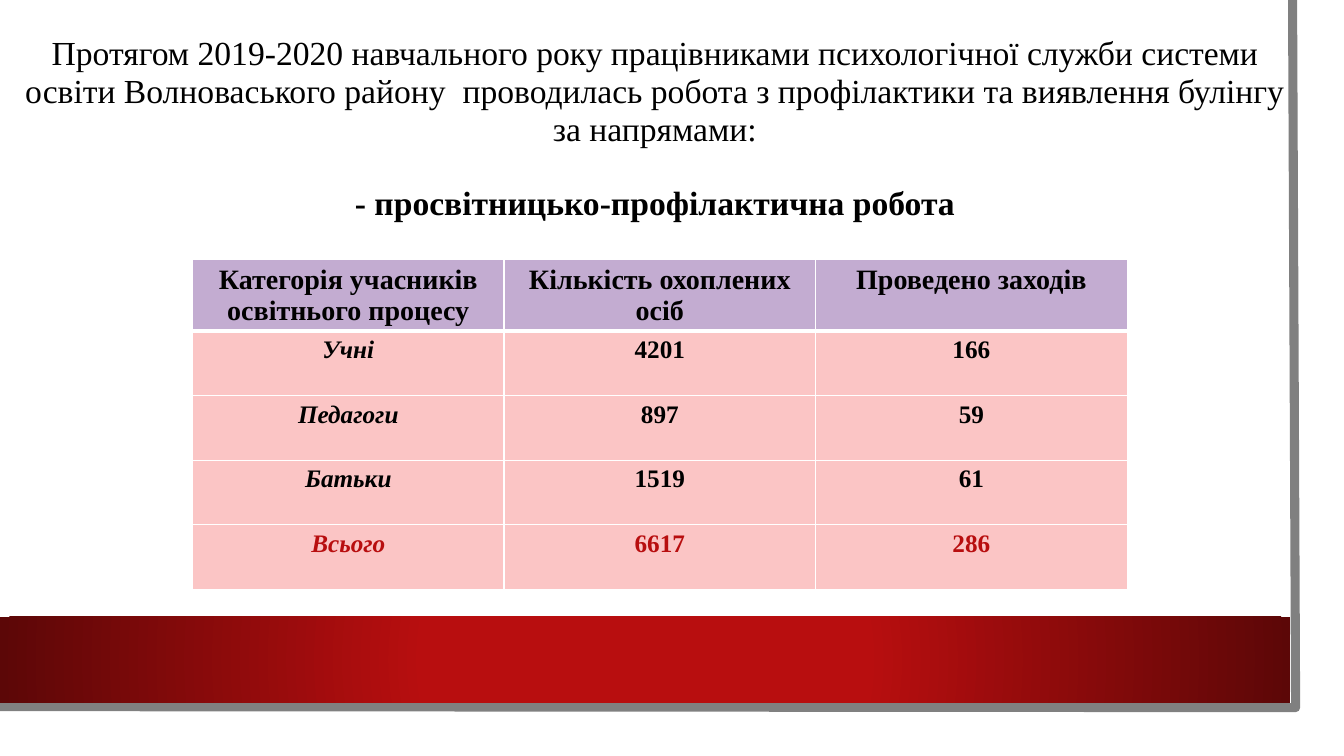
from lxml.etree import SubElement
from pptx import Presentation
from pptx.dml.color import RGBColor
from pptx.enum.text import MSO_ANCHOR, PP_ALIGN
from pptx.enum.shapes import MSO_SHAPE
from pptx.oxml import parse_xml
from pptx.oxml.ns import nsdecls, qn
from pptx.util import Inches, Pt

COLORS = {
    "text": "000000", "accent": "B80E0F", "dark": "5C0707", "frame": "808080",
    "header": "C3ACD1", "body": "FBC5C5", "border": "FFFFFF",
}
FONT = "Times New Roman"
INTRO = ("Протягом 2019-2020 навчального року працівниками психологічної служби системи "
         "освіти Волноваського району  проводилась робота з профілактики та виявлення "
         "булінгу за напрямами:")
SUBTITLE = "- просвітницько-профілактична робота"
ROWS = [
    ("Категорія учасників освітнього процесу", "Кількість охоплених осіб", "Проведено заходів"),
    ("Учні", "4201", "166"),
    ("Педагоги", "897", "59"),
    ("Батьки", "1519", "61"),
    ("Всього", "6617", "286"),
]
HEADER_HEIGHT, ROW_HEIGHT, COLUMN_WIDTH = 0.71, 0.64, 3.09
FRAME_POINTS = [(12.82, 0), (12.85, 7.02), (-0.03, 7.01)]


def color(name):
    return RGBColor.from_string(COLORS[name])


def write(para, text, size=24, bold=False, italic=False, ink="text", spacing=None, before=0):
    para.alignment = PP_ALIGN.CENTER
    para.space_before = Pt(before)
    if spacing:
        para.line_spacing = spacing
    span = para.add_run()
    span.text = text
    span.font.name = FONT
    span.font.size = Pt(size)
    span.font.bold = bold
    span.font.italic = italic
    span.font.color.rgb = color(ink)


def add_frame(page):
    points = [(Inches(x), Inches(y)) for x, y in FRAME_POINTS]
    builder = page.shapes.build_freeform(*points[0])
    builder.add_line_segments(points[1:], close=False)
    frame = builder.convert_to_shape()
    frame.shadow.inherit = False
    frame.fill.background()
    frame.line.color.rgb = color("frame")
    frame.line.width = Pt(6.5)


def add_band(page):
    band = page.shapes.add_shape(
        MSO_SHAPE.RECTANGLE, 0, Inches(6.12), Inches(12.8), Inches(0.85))
    band.shadow.inherit = False
    band.line.fill.background()
    gradient = parse_xml(
        f'<a:gradFill {nsdecls("a")} rotWithShape="1"><a:gsLst>'
        f'<a:gs pos="34000"><a:srgbClr val="{COLORS["accent"]}"/></a:gs>'
        f'<a:gs pos="100000"><a:srgbClr val="{COLORS["dark"]}"/></a:gs></a:gsLst>'
        '<a:path path="circle"><a:fillToRect l="50000" t="50000" r="50000" b="50000"/>'
        '</a:path></a:gradFill>')
    band._element.spPr.find(qn("a:prstGeom")).addnext(gradient)


def add_title(page):
    title = page.shapes.title
    title.left, title.top = Inches(0.15), Inches(0.18)
    title.width, title.height = Inches(12.69), Inches(5.82)
    frame = title.text_frame
    frame.word_wrap = True
    frame.vertical_anchor = MSO_ANCHOR.TOP
    frame.margin_top = Inches(0.17)
    write(frame.paragraphs[0], INTRO, spacing=0.94)
    write(frame.add_paragraph(), SUBTITLE, bold=True, spacing=0.94, before=26)


def set_borders(cell, bottom):
    properties = cell._tc.get_or_add_tcPr()
    for index, (side, width) in enumerate((("L", 1), ("R", 1), ("T", 1), ("B", bottom))):
        line = parse_xml(f'<a:ln{side} {nsdecls("a")} w="{Pt(width)}"/>')
        fill = SubElement(line, qn("a:solidFill"))
        SubElement(fill, qn("a:srgbClr")).set("val", COLORS["border"])
        properties.insert(index, line)


def add_summary(page):
    columns = len(ROWS[0])
    height = HEADER_HEIGHT + ROW_HEIGHT * (len(ROWS) - 1)
    table = page.shapes.add_table(
        len(ROWS), columns, Inches(1.91), Inches(2.57),
        Inches(COLUMN_WIDTH * columns), Inches(height)).table
    for column in table.columns:
        column.width = Inches(COLUMN_WIDTH)
    for row, values in enumerate(ROWS):
        header, total = row == 0, row == len(ROWS) - 1
        table.rows[row].height = Inches(HEADER_HEIGHT if header else ROW_HEIGHT)
        for column, value in enumerate(values):
            cell = table.cell(row, column)
            cell.fill.solid()
            cell.fill.fore_color.rgb = color("header" if header else "body")
            set_borders(cell, bottom=3 if header else 1)
            write(cell.text_frame.paragraphs[0], value, size=20 if header else 18,
                  bold=True, italic=column == 0 and not header,
                  ink="accent" if total else "text")


def main():
    deck = Presentation()
    deck.slide_width, deck.slide_height = Inches(13.33), Inches(7.5)
    page = deck.slides.add_slide(deck.slide_layouts[5])
    add_frame(page)
    add_band(page)
    add_title(page)
    add_summary(page)
    deck.save("out.pptx")


if __name__ == "__main__":
    main()
